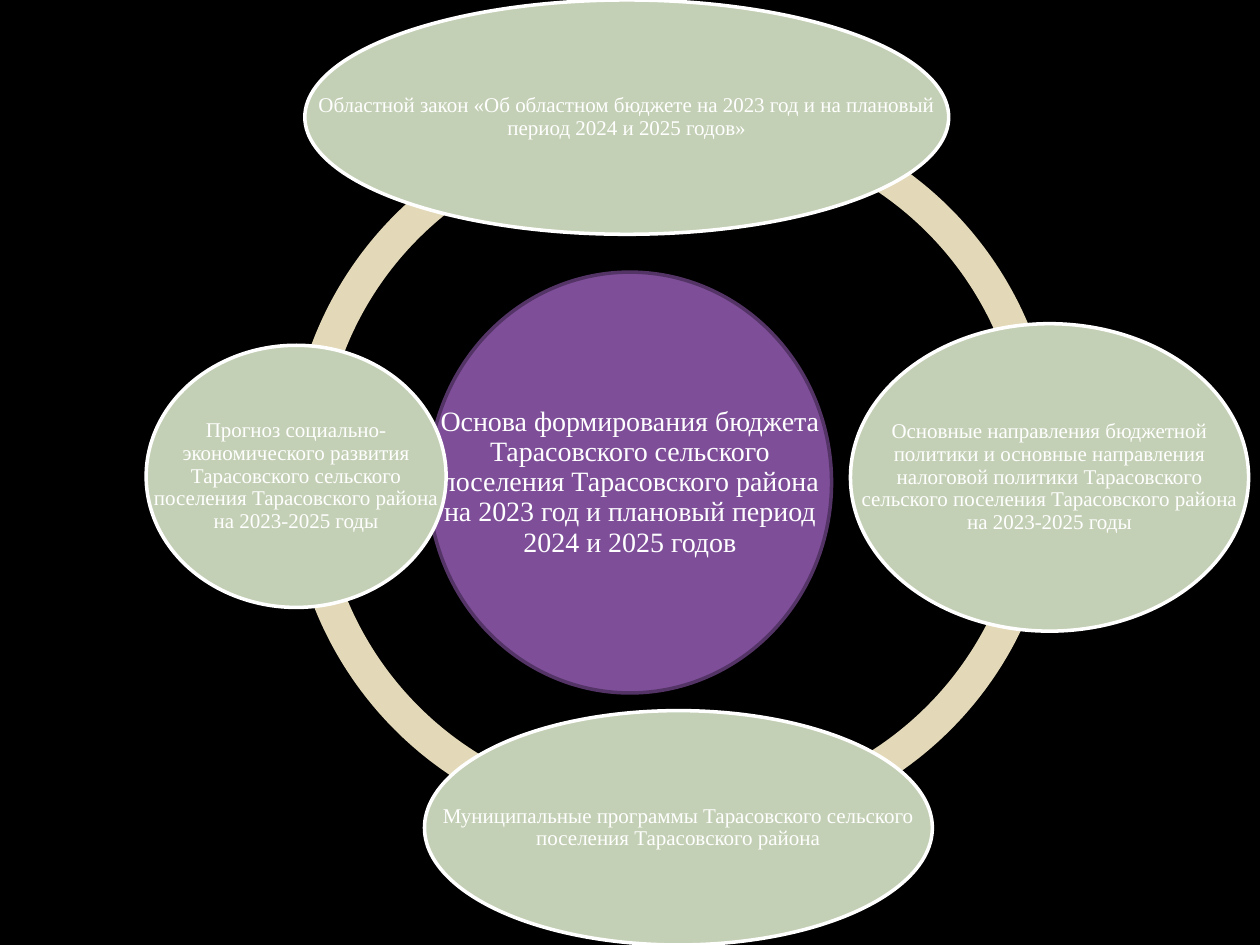
"""Builds a radial slide: a central circle and four budget sources on a ring."""
from dataclasses import dataclass

from pptx import Presentation
from pptx.dml.color import RGBColor
from pptx.enum.shapes import MSO_SHAPE
from pptx.enum.text import MSO_ANCHOR, PP_ALIGN
from pptx.util import Pt

ELLIPSE, BLOCK_ARC = MSO_SHAPE.OVAL, MSO_SHAPE.BLOCK_ARC
MIDDLE, CENTER = MSO_ANCHOR.MIDDLE, PP_ALIGN.CENTER
FONT = "Times New Roman"
WHITE, SAGE, SAND = "FFFFFF", "C4D0B5", "E3D9B8"
PURPLE, DARK_PURPLE = "7E4E99", "543466"
ARC_SIZE, ARC_THICKNESS = 415.4, 0.046
UNITS_PER_DEGREE = 0.6
INSET = 1.5


@dataclass
class Arc:
    left: float
    top: float
    start: float
    end: float


@dataclass
class Bubble:
    left: float
    top: float
    width: float
    height: float
    text: str
    fill: str = SAGE
    line: str = WHITE
    size: float = 12


ARCS = [
    Arc(164.9, 61.9, 179.23, 265.99),
    Arc(164.9, 62.6, 85.63, 179.55),
    Arc(188.6, 62.6, 0.88, 92.49),
    Arc(188.6, 58.3, 259.04, 1.99),
]

BUBBLES = [
    Bubble(244.8, 155.5, 230.4, 240.5,
           "Основа формирования бюджета Тарасовского сельского поселения "
           "Тарасовского района на 2023 год и плановый период 2024 и 2025 годов",
           PURPLE, DARK_PURPLE, 16),
    Bubble(174.2, 0, 367.9, 133.9,
           "Областной закон «Об областном бюджете на 2023 год и на плановый "
           "период 2024 и 2025 годов»"),
    Bubble(486, 185, 227.5, 175.7,
           "Основные направления бюджетной политики и основные направления "
           "налоговой политики Тарасовского сельского поселения "
           "Тарасовского района на 2023-2025 годы"),
    Bubble(242.6, 406.1, 290.2, 133.9,
           "Муниципальные программы Тарасовского сельского поселения "
           "Тарасовского района"),
    Bubble(83.5, 197.3, 171.4, 149.8,
           "Прогноз социально-экономического развития Тарасовского сельского "
           "поселения Тарасовского района на 2023-2025 годы"),
]


def rgb(value: str) -> RGBColor:
    """Turn a hex string into a colour."""
    return RGBColor.from_string(value)


def paint(fill, color: str) -> None:
    """Give a fill one solid colour."""
    fill.solid()
    fill.fore_color.rgb = rgb(color)


def add_arc(s, arc: Arc) -> None:
    """Draw one part of the ring."""
    sp = s.shapes.add_shape(BLOCK_ARC, Pt(arc.left), Pt(arc.top),
                            Pt(ARC_SIZE), Pt(ARC_SIZE))
    sp.shadow.inherit = False
    sp.adjustments[0] = arc.start * UNITS_PER_DEGREE
    sp.adjustments[1] = arc.end * UNITS_PER_DEGREE
    sp.adjustments[2] = ARC_THICKNESS
    paint(sp.fill, SAND)
    sp.line.fill.background()


def add_text(s, box: tuple, text: str, *, size: float, color: str = WHITE) -> None:
    """Write centred text across a box."""
    tf = s.shapes.add_textbox(*box).text_frame
    tf.word_wrap = True
    tf.vertical_anchor = MIDDLE
    tf.margin_left = tf.margin_right = Pt(INSET)
    tf.margin_top = tf.margin_bottom = Pt(INSET)
    p = tf.paragraphs[0]
    p.alignment = CENTER
    p.line_spacing = 0.9
    r = p.add_run()
    r.text = text
    r.font.name = FONT
    r.font.size = Pt(size)
    r.font.color.rgb = rgb(color)


def add_bubble(s, b: Bubble) -> None:
    """Draw an ellipse with text over its full width."""
    box = Pt(b.left), Pt(b.top), Pt(b.width), Pt(b.height)
    sp = s.shapes.add_shape(ELLIPSE, *box)
    sp.shadow.inherit = False
    paint(sp.fill, b.fill)
    sp.line.color.rgb = rgb(b.line)
    sp.line.width = Pt(2)
    add_text(s, box, b.text, size=b.size)


def main() -> None:
    """Build and save the slide."""
    prs = Presentation()
    prs.slide_width, prs.slide_height = Pt(720), Pt(540)
    s = prs.slides.add_slide(prs.slide_layouts[6])
    paint(s.background.fill, "000000")
    for arc in ARCS:
        add_arc(s, arc)
    for bubble in BUBBLES:
        add_bubble(s, bubble)
    prs.save("out.pptx")


if __name__ == "__main__":
    main()
